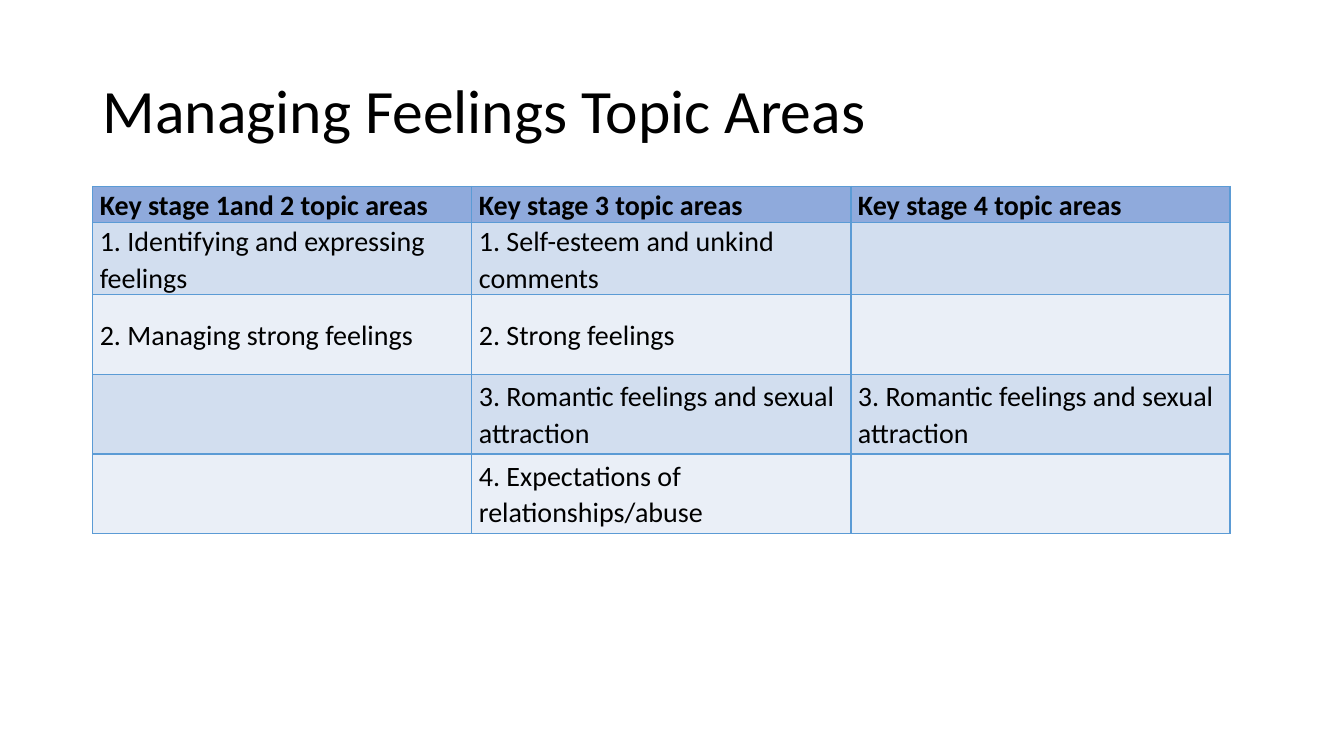
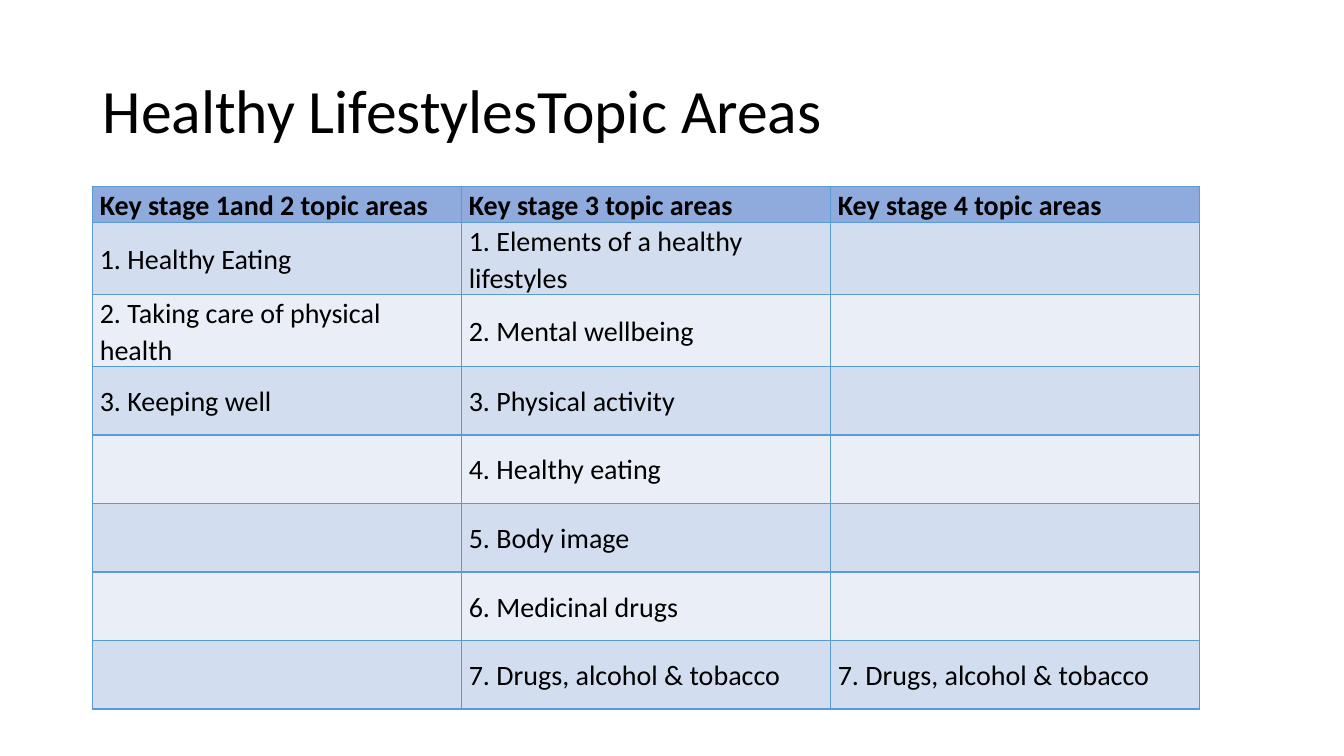
"""Build two slides of topic areas by key stage, each a title above a banded table."""
from lxml.etree import SubElement
from pptx import Presentation
from pptx.dml.color import RGBColor
from pptx.enum.text import MSO_ANCHOR
from pptx.oxml.ns import qn
from pptx.util import Inches, Pt

HEADERS = ("Key stage 1and 2 topic areas", "Key stage 3 topic areas", "Key stage 4 topic areas")
SLIDES = [
    {
        "title": "Managing Feelings Topic Areas",
        "col_width": 3.76,
        "row_heights": [0.36, 0.68] + [0.79] * 3,
        "topics": [
            ("1. Identifying and expressing feelings", "1. Self-esteem and unkind comments", ""),
            ("2. Managing strong feelings", "2. Strong feelings", ""),
            ("", "3. Romantic feelings and sexual attraction", "3. Romantic feelings and sexual attraction"),
            ("", "4. Expectations of relationships/abuse", ""),
        ],
    },
    {
        "title": "Healthy LifestylesTopic Areas",
        "col_width": 3.66,
        "row_heights": [0.31, 0.59] + [0.68] * 6,
        "topics": [
            ("1. Healthy Eating", "1. Elements of a healthy lifestyles", ""),
            ("2. Taking care of physical health", "2. Mental wellbeing", ""),
            ("3. Keeping well", "3. Physical activity", ""),
            ("", "4. Healthy eating", ""),
            ("", "5. Body image", ""),
            ("", "6. Medicinal drugs", ""),
            ("", "7. Drugs, alcohol & tobacco", "7. Drugs, alcohol & tobacco"),
        ],
    },
]

FONT = "Calibri"
BLACK = RGBColor(0x00, 0x00, 0x00)
HEADER_FILL = RGBColor(0x8F, 0xAA, 0xDC)
BAND_FILLS = (RGBColor(0xEA, 0xEF, 0xF7), RGBColor(0xD2, 0xDE, 0xEF))
BORDER = RGBColor(0x5B, 0x9B, 0xD5)
LEFT, TITLE_TOP, TABLE_TOP = Inches(0.92), Inches(0.4), Inches(1.85)
TITLE_WIDTH = Inches(11.5)


def write(tf, text, size=20, bold=False, spacing=1.07):
    tf.word_wrap = True
    p = tf.paragraphs[0]
    p.line_spacing = spacing
    p.font.size = Pt(size)
    if text:
        r = p.add_run()
        r.text = text
        r.font.name, r.font.size, r.font.bold = FONT, Pt(size), bold
        r.font.color.rgb = BLACK


def add_borders(cell):
    tc_pr = cell._tc.get_or_add_tcPr()
    for side in ("a:lnL", "a:lnR", "a:lnT", "a:lnB"):
        line = SubElement(tc_pr, qn(side), w=str(Pt(1)))
        fill = SubElement(line, qn("a:solidFill"))
        SubElement(fill, qn("a:srgbClr"), val=str(BORDER))


def add_title(s, text):
    tf = s.shapes.add_textbox(LEFT, TITLE_TOP, TITLE_WIDTH, TABLE_TOP - TITLE_TOP).text_frame
    tf.vertical_anchor = MSO_ANCHOR.MIDDLE
    write(tf, text, size=44, spacing=0.9)


def add_topic_table(s, topics, col_width, row_heights):
    rows = [HEADERS, *topics]
    table = s.shapes.add_table(
        len(rows), len(HEADERS), LEFT, TABLE_TOP,
        Inches(col_width * len(HEADERS)), Inches(sum(row_heights)),
    ).table
    for column in table.columns:
        column.width = Inches(col_width)
    for i, (texts, height) in enumerate(zip(rows, row_heights)):
        table.rows[i].height = Inches(height)
        for j, text in enumerate(texts):
            cell = table.cell(i, j)
            cell.margin_left = cell.margin_right = Inches(0.07)
            cell.margin_top = cell.margin_bottom = 0
            cell.vertical_anchor = MSO_ANCHOR.MIDDLE
            add_borders(cell)
            cell.fill.solid()
            cell.fill.fore_color.rgb = BAND_FILLS[i % 2] if i else HEADER_FILL
            write(cell.text_frame, text, bold=i == 0)


def main():
    prs = Presentation()
    prs.slide_width, prs.slide_height = Inches(13.33), Inches(7.5)
    for content in SLIDES:
        s = prs.slides.add_slide(prs.slide_layouts[6])
        add_title(s, content["title"])
        add_topic_table(s, content["topics"], content["col_width"], content["row_heights"])
    prs.save("out.pptx")


if __name__ == "__main__":
    main()
